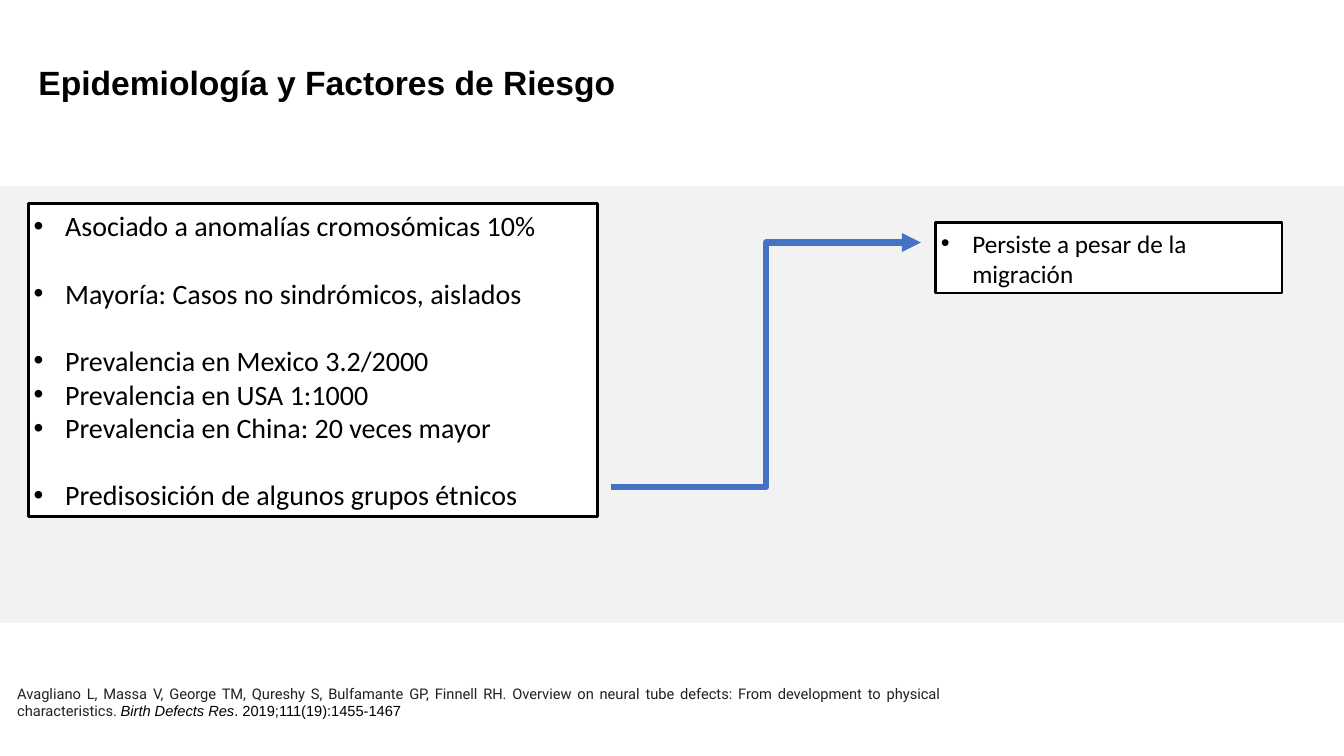
from lxml.etree import SubElement
from pptx import Presentation
from pptx.dml.color import RGBColor
from pptx.enum.shapes import MSO_CONNECTOR, MSO_SHAPE
from pptx.enum.text import MSO_ANCHOR, MSO_AUTO_SIZE, PP_ALIGN
from pptx.oxml.ns import qn
from pptx.util import Pt

PX = 9525  # EMU per pixel, 96 pixels to the inch


def rgb(value):
    return RGBColor.from_string(value)


def write(p, text, size, font="Arial", color="000000", bold=False, italic=False):
    """Add one formatted run to a paragraph."""
    r = p.add_run()
    r.text = text
    f = r.font
    f.size, f.name, f.bold, f.italic = Pt(size), font, bold, italic
    f.color.rgb = rgb(color)


prs = Presentation()
prs.slide_width, prs.slide_height = 1280 * PX, 720 * PX
s = prs.slides.add_slide(prs.slide_layouts.get_by_name("Two Content"))
title, facts, migration = s.placeholders

# Grey band behind everything
band = s.shapes.add_shape(MSO_SHAPE.RECTANGLE, 0, 177 * PX, 1280 * PX, 416 * PX)
band.shadow.inherit = False
band.fill.solid()
band.fill.fore_color.rgb = rgb("F2F2F2")
band.line.fill.background()
title.element.addprevious(band.element)

# Title
title.left, title.top, title.width, title.height = [v * PX for v in (27, 54, 702, 48)]
title.text_frame.auto_size = MSO_AUTO_SIZE.NONE
title.text_frame.vertical_anchor = MSO_ANCHOR.MIDDLE
p = title.text_frame.paragraphs[0]
p.alignment = PP_ALIGN.LEFT
write(p, "Epidemiología y Factores de Riesgo", 24, bold=True)

# Framed lists: placeholder, box in px, text size, (space before in points, text)
lists = [
    (facts, (27, 194, 542, 298), 20, [
        (0, "Asociado a anomalías cromosómicas 10%"),
        (24, "Mayoría: Casos no sindrómicos, aislados"),
        (24, "Prevalencia en Mexico 3.2/2000"),
        (0, "Prevalencia en USA 1:1000"),
        (0, "Prevalencia en China: 20 veces mayor"),
        (24, "Predisosición de algunos grupos étnicos"),
    ]),
    (migration, (891, 212, 330, 67), 18, [(0, "Persiste a pesar de la migración")]),
]
for sp, box, size, items in lists:
    sp.left, sp.top, sp.width, sp.height = [v * PX for v in box]
    sp.fill.solid()
    sp.fill.fore_color.rgb = rgb("FFFFFF")
    sp.line.color.rgb = rgb("000000")
    sp.line.width = Pt(2)
    tf = sp.text_frame
    tf.auto_size = MSO_AUTO_SIZE.NONE
    tf.vertical_anchor = MSO_ANCHOR.TOP
    tf.margin_left = tf.margin_right = tf.margin_top = tf.margin_bottom = 5 * PX
    for i, (space, text) in enumerate(items):
        p = tf.add_paragraph() if i else tf.paragraphs[0]
        p.space_before = Pt(space)
        pPr = p._p.get_or_add_pPr()
        pPr.set("marL", str(30 * PX))
        pPr.set("indent", str(-30 * PX))
        SubElement(SubElement(pPr, qn("a:buClr")), qn("a:srgbClr"), val="000000")
        SubElement(pPr, qn("a:buFont"), typeface="Arial")
        SubElement(pPr, qn("a:buChar"), char="•")
        write(p, text, size, font="Calibri")

# Arrow from the last fact to the migration box
arrow = s.shapes.add_connector(
    MSO_CONNECTOR.ELBOW, 582 * PX, 464 * PX, 877 * PX, 231 * PX)
arrow.line.color.rgb = rgb("4472C4")
arrow.line.width = Pt(4.5)
SubElement(arrow.line._get_or_add_ln(), qn("a:tailEnd"), type="triangle")
SubElement(arrow.element.spPr, qn("a:effectLst"))

# Citation
citation = s.shapes.add_textbox(7 * PX, 647 * PX, 899 * PX, 38 * PX)
citation.text_frame.word_wrap = True
p = citation.text_frame.paragraphs[0]
p.alignment = PP_ALIGN.JUSTIFY
write(p, "Avagliano L, Massa V, George TM, Qureshy S, Bulfamante GP, Finnell RH. "
      "Overview on neural tube defects: From development to physical characteristics. ",
      10.5, font="Roboto", color="212121")
write(p, "Birth Defects Res", 10.5, italic=True)
write(p, ". 2019;111(19):1455-1467", 10.5)

prs.save("out.pptx")
